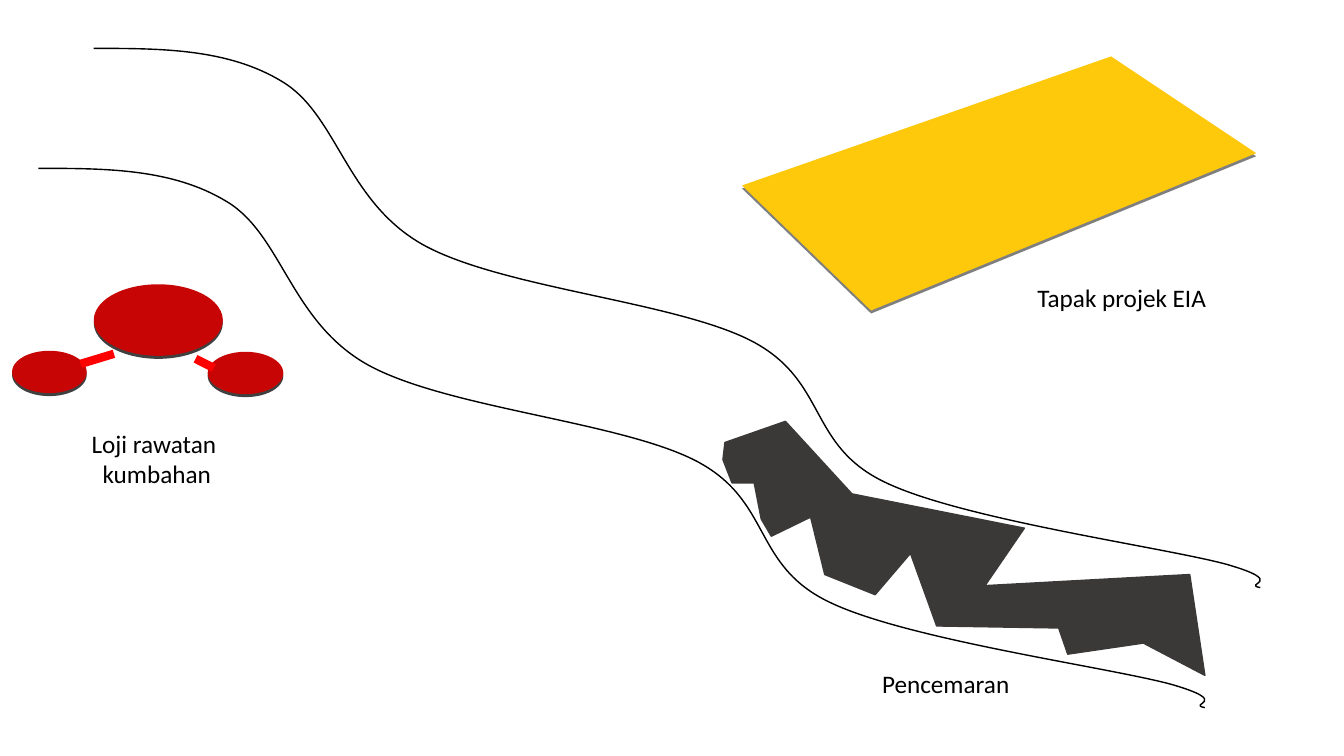
from dataclasses import dataclass
from typing import Any

from lxml import etree
from pptx import Presentation
from pptx import util as u
from pptx.dml.color import RGBColor
from pptx.enum import shapes, text
from pptx.oxml import ns

Point = tuple[float, float]


@dataclass(frozen=True)
class Theme:
    font: str = "Calibri"
    label_size: float = 18
    ink: str = "000000"
    plate: str = "FFC90B"
    plate_edge: str = "7F7F7F"
    tank: str = "C80505"
    tank_edge: str = "404040"
    pipe: str = "FF0000"
    pollution: str = "3B3838"
    thin: float = 1
    pipe_width: float = 6


@dataclass(frozen=True)
class Label:
    lines: tuple[str, ...]
    left: float
    top: float
    width: float
    height: float
    align: Any = text.PP_ALIGN.LEFT


@dataclass(frozen=True)
class Tank:
    left: float
    top: float
    width: float
    height: float


@dataclass(frozen=True)
class Pipe:
    start: Point
    end: Point


THEME = Theme()
DEPTH = 0.03
BANK_SHIFTS: tuple[Point, ...] = ((0, 0), (0.55, -1.19))
BANK: tuple[Point, ...] = (
    (0.38, 1.67),
    (1.04, 1.67), (1.71, 1.67), (2.25, 2),
    (2.8, 2.33), (2.88, 3.19), (3.65, 3.62),
    (4.43, 4.05), (6.14, 4.18), (6.9, 4.57),
    (7.67, 4.97), (7.45, 5.61), (8.24, 5.98),
    (9.02, 6.35), (11, 6.62), (11.62, 6.79),
    (12.24, 6.97), (11.76, 6.98), (11.95, 7.02),
)
PLATE: tuple[Point, ...] = ((7.36, 1.84), (11.02, 0.56), (12.46, 1.52), (8.64, 3.08))
POLLUTION: tuple[Point, ...] = (
    (7.19, 4.39), (7.79, 4.18), (8.45, 4.9), (10.16, 5.24), (9.77, 5.81),
    (11.8, 5.7), (11.95, 6.7), (11.34, 6.38), (10.59, 6.49), (10.5, 6.23),
    (9.29, 6.21), (9.03, 5.49), (8.68, 5.9), (8.18, 5.7), (8.04, 5.13),
    (7.65, 5.32), (7.55, 5.15), (7.48, 4.79), (7.26, 4.79), (7.17, 4.56),
)
TREATMENT_PLANT: tuple[Tank | Pipe, ...] = (
    Tank(0.93, 2.82, 1.28, 0.71),
    Tank(0.12, 3.48, 0.74, 0.42),
    Pipe((1.13, 3.51), (0.8, 3.61)),
    Tank(2.06, 3.49, 0.75, 0.42),
    Pipe((1.94, 3.56), (2.12, 3.65)),
)
SITE_LABEL = Label(("Tapak projek EIA",), 10.19, 2.75, 1.89, 0.4)
PLANT_LABEL = Label(("Loji rawatan ", "kumbahan"), 0.8, 4.2, 1.51, 0.71, text.PP_ALIGN.CENTER)
POLLUTION_LABEL = Label(("Pencemaran",), 8.65, 6.58, 1.54, 0.4)


def shifted(points: tuple[Point, ...], dx: float, dy: float) -> tuple[Point, ...]:
    return tuple((x + dx, y + dy) for x, y in points)


def add_outline(canvas: Any, points: tuple[Point, ...], closed: bool = True) -> Any:
    start, *rest = [(u.Inches(x), u.Inches(y)) for x, y in points]
    builder = canvas.build_freeform(*start)
    builder.add_line_segments(rest, close=closed)
    shape = builder.convert_to_shape()
    shape.shadow.inherit = False
    return shape


def paint(shape: Any, fill: str, line: str | None = None) -> None:
    shape.fill.solid()
    shape.fill.fore_color.rgb = RGBColor.from_string(fill)
    if line is None:
        shape.line.fill.background()
    else:
        stroke(shape, line, THEME.thin)


def stroke(shape: Any, color: str, width: float) -> None:
    shape.line.color.rgb = RGBColor.from_string(color)
    shape.line.width = u.Pt(width)


def add_bank(canvas: Any, points: tuple[Point, ...]) -> None:
    """Draw an open curve: a start point, then three Bezier points per piece."""
    bank = add_outline(canvas, points, closed=False)
    bank.fill.background()
    stroke(bank, THEME.ink, THEME.thin)
    segments = list(bank.element.iter(ns.qn("a:lnTo")))
    outline = segments[0].getparent()
    for first in range(0, len(segments), 3):
        curve = etree.SubElement(outline, ns.qn("a:cubicBezTo"))
        for segment in segments[first:first + 3]:
            curve.append(segment[0])
            outline.remove(segment)


def add_plate(canvas: Any) -> None:
    for drop, color in ((DEPTH, THEME.plate_edge), (0, THEME.plate)):
        paint(add_outline(canvas, shifted(PLATE, 0, drop)), color)


def add_tank(canvas: Any, tank: Tank) -> None:
    for drop, color in ((DEPTH, THEME.tank_edge), (0, THEME.tank)):
        disc = canvas.add_shape(
            shapes.MSO_SHAPE.OVAL, u.Inches(tank.left), u.Inches(tank.top + drop),
            u.Inches(tank.width), u.Inches(tank.height))
        disc.shadow.inherit = False
        paint(disc, color)


def add_pipe(canvas: Any, pipe: Pipe) -> None:
    ends = [u.Inches(value) for value in (*pipe.start, *pipe.end)]
    connector = canvas.add_connector(shapes.MSO_CONNECTOR.STRAIGHT, *ends)
    stroke(connector, THEME.pipe, THEME.pipe_width)
    etree.SubElement(connector.element.spPr, ns.qn("a:effectLst"))


def add_label(canvas: Any, label: Label) -> None:
    box = canvas.add_textbox(u.Inches(label.left), u.Inches(label.top),
                             u.Inches(label.width), u.Inches(label.height))
    frame = box.text_frame
    frame.text = "\n".join(label.lines)
    frame.word_wrap = False
    frame.auto_size = text.MSO_AUTO_SIZE.SHAPE_TO_FIT_TEXT
    font_format = {"name": THEME.font, "size": u.Pt(THEME.label_size)}
    for paragraph in frame.paragraphs:
        paragraph.alignment = label.align
        for run in paragraph.runs:
            for attribute, value in font_format.items():
                setattr(run.font, attribute, value)
            run.font.color.rgb = RGBColor.from_string(THEME.ink)


def main() -> None:
    presentation = Presentation()
    presentation.slide_width = u.Inches(13.33)
    presentation.slide_height = u.Inches(7.5)
    slide = presentation.slides.add_slide(presentation.slide_layouts[6])

    river = slide.shapes.add_group_shape().shapes
    for shift in BANK_SHIFTS:
        add_bank(river, shifted(BANK, *shift))

    site = slide.shapes.add_group_shape().shapes
    add_plate(site)
    add_label(site, SITE_LABEL)

    plant = slide.shapes.add_group_shape().shapes
    for part in TREATMENT_PLANT:
        if isinstance(part, Tank):
            add_tank(plant, part)
        else:
            add_pipe(plant, part)
    add_label(plant, PLANT_LABEL)

    paint(add_outline(slide.shapes, POLLUTION), THEME.pollution, THEME.pollution)
    add_label(slide.shapes, POLLUTION_LABEL)
    presentation.save("out.pptx")


if __name__ == "__main__":
    main()
